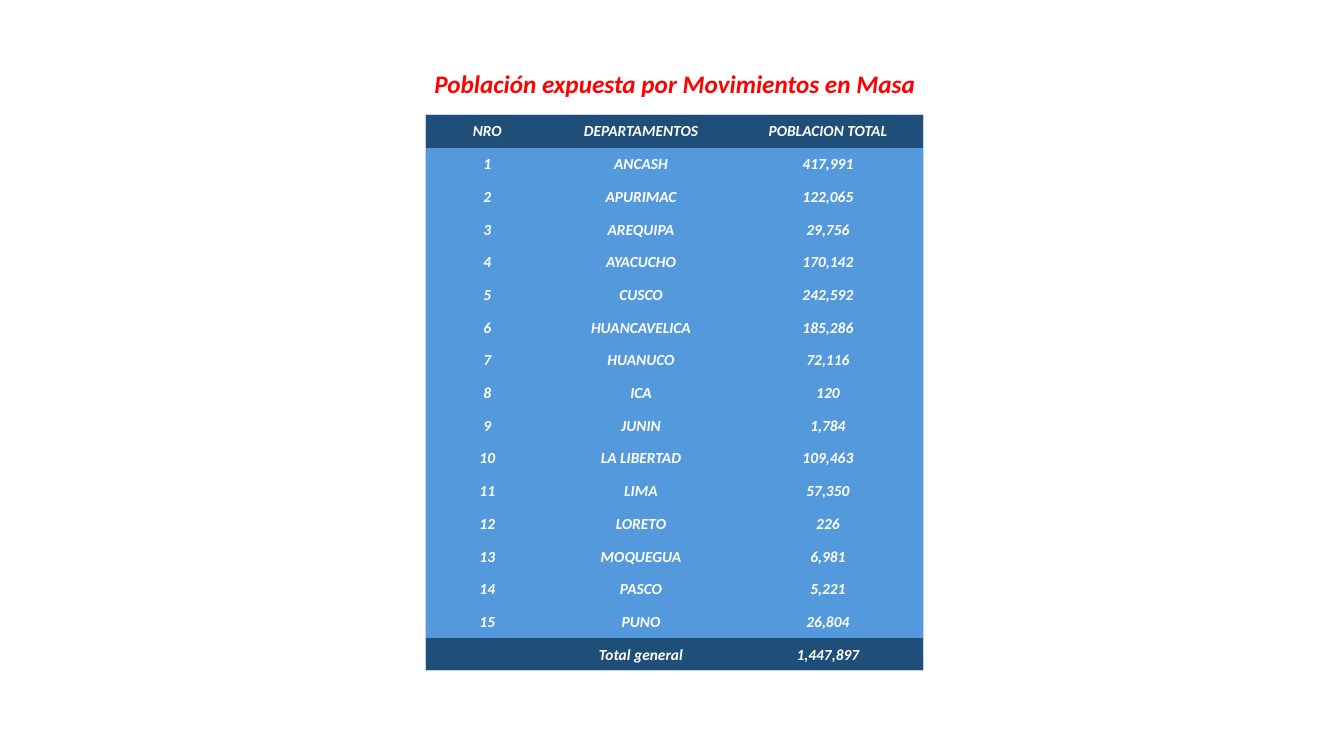
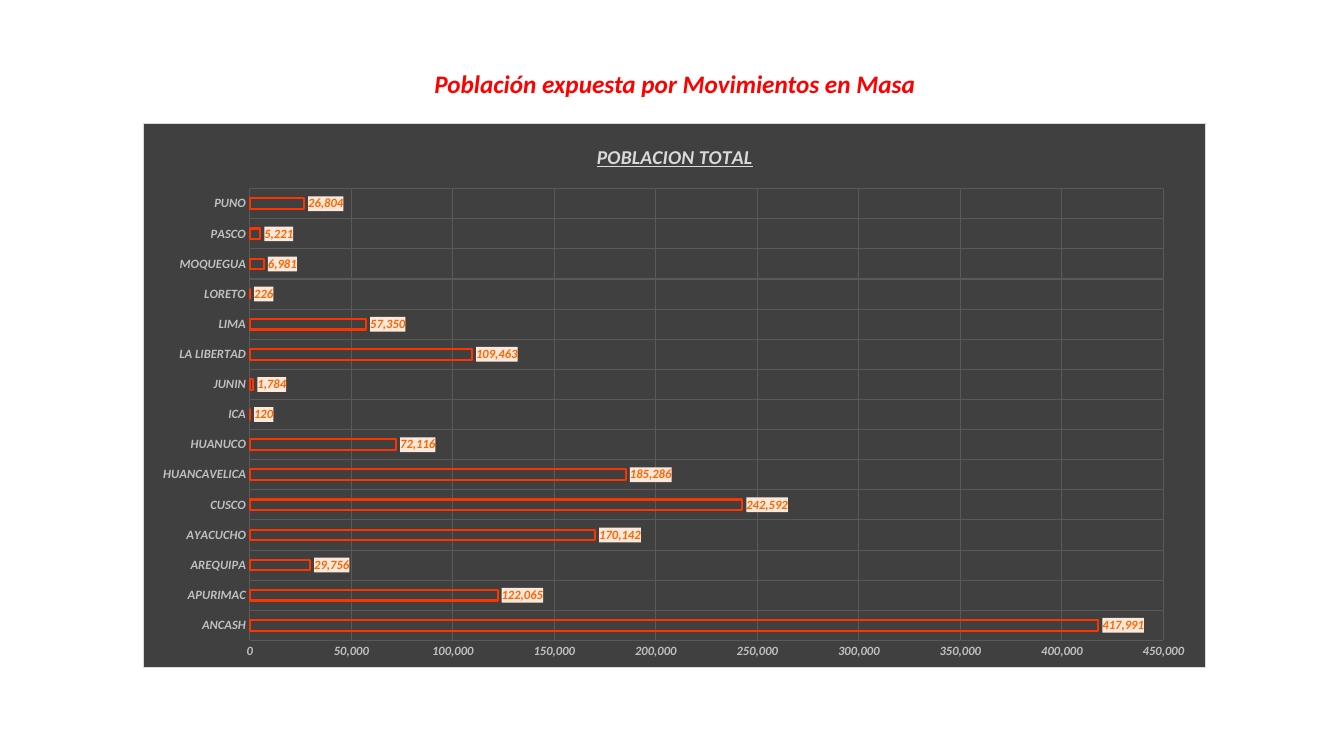
from typing import NamedTuple

from lxml.etree import SubElement
from pptx import Presentation
from pptx.chart.data import CategoryChartData
from pptx.dml.color import RGBColor
from pptx.enum.chart import XL_CHART_TYPE, XL_LABEL_POSITION, XL_TICK_MARK
from pptx.enum.text import MSO_ANCHOR, MSO_AUTO_SIZE, PP_ALIGN
from pptx.oxml import parse_xml
from pptx.oxml.ns import nsdecls, qn
from pptx.util import Pt

# Shared style
FONT = "Calibri"
RED = RGBColor(0xFF, 0x00, 0x00)
WHITE = RGBColor(0xFF, 0xFF, 0xFF)
NAVY = RGBColor(0x1F, 0x4E, 0x79)
BLUE = RGBColor(0x54, 0x99, 0xDB)
EDGE = RGBColor(0xC4, 0xD5, 0xEB)
DARK = RGBColor(0x40, 0x40, 0x40)
GRID = RGBColor(0x59, 0x59, 0x59)
SILVER = RGBColor(0xBF, 0xBF, 0xBF)
PALE = RGBColor(0xD9, 0xD9, 0xD9)
FLAME = RGBColor(0xFF, 0x33, 0x00)
ORANGE = RGBColor(0xFF, 0x66, 0x00)
CREAM = RGBColor(0xFC, 0xE9, 0xDC)

TITLE = "Población expuesta por Movimientos en Masa"
HEADS = ("NRO", "DEPARTAMENTOS", "POBLACION TOTAL")
NO_STYLE = "{2D5ABB26-0587-4C30-8999-92F81FD0307C}"
NUMBER = "#,##0"


class Box(NamedTuple):
    left: float
    top: float
    width: float
    height: float

    def points(self) -> tuple:
        return tuple(Pt(side) for side in self)


class Region(NamedTuple):
    name: str
    people: int


TITLE_BOX = Box(301, 45.4, 362, 29)
TABLE_BOX = Box(303.8, 82, 355.7, 397.4)
CHART_BOX = Box(102.2, 87.8, 759.6, 389.5)
PLOT = {"x": 0.1, "y": 0.12, "w": 0.86, "h": 0.83}
WIDTHS = (88.6, 131, 136.1)

REGIONS = (
    Region("ANCASH", 417991),
    Region("APURIMAC", 122065),
    Region("AREQUIPA", 29756),
    Region("AYACUCHO", 170142),
    Region("CUSCO", 242592),
    Region("HUANCAVELICA", 185286),
    Region("HUANUCO", 72116),
    Region("ICA", 120),
    Region("JUNIN", 1784),
    Region("LA LIBERTAD", 109463),
    Region("LIMA", 57350),
    Region("LORETO", 226),
    Region("MOQUEGUA", 6981),
    Region("PASCO", 5221),
    Region("PUNO", 26804),
)


def set_font(font, size: float, color: RGBColor) -> None:
    font.name = FONT
    font.size = Pt(size)
    font.bold = font.italic = True
    font.color.rgb = color


def write(frame, text: str, size: float, color: RGBColor):
    line = frame.paragraphs[0]
    line.alignment = PP_ALIGN.CENTER
    run = line.add_run()
    run.text = text
    set_font(run.font, size, color)
    return run


def add_slide(deck):
    slide = deck.slides.add_slide(deck.slide_layouts[5])
    title = slide.shapes.title
    title.left, title.top, title.width, title.height = TITLE_BOX.points()
    frame = title.text_frame
    frame.word_wrap = False
    frame.auto_size = MSO_AUTO_SIZE.SHAPE_TO_FIT_TEXT
    frame.vertical_anchor = MSO_ANCHOR.MIDDLE
    write(frame, TITLE, 18, RED)
    return slide


def paint(cell, sides: list, color: RGBColor) -> None:
    # Borders must come before the fill
    props = cell._tc.get_or_add_tcPr()
    for side in sides:
        line = SubElement(props, qn(f"a:ln{side}"), w=str(Pt(0.5)))
        fill = SubElement(line, qn("a:solidFill"))
        SubElement(fill, qn("a:srgbClr"), val=str(EDGE))
    cell.fill.solid()
    cell.fill.fore_color.rgb = color


def add_grid(slide) -> None:
    total = sum(region.people for region in REGIONS)
    rows = [HEADS]
    rows += [(str(n), region.name, f"{region.people:,}")
             for n, region in enumerate(REGIONS, 1)]
    rows.append(("", "Total general", f"{total:,}"))
    last, end = len(rows) - 1, len(HEADS) - 1

    table = slide.shapes.add_table(
        len(rows), len(HEADS), *TABLE_BOX.points()).table
    table.first_row = table.horz_banding = False
    table._tbl.tblPr.find(qn("a:tableStyleId")).text = NO_STYLE
    for column, width in zip(table.columns, WIDTHS):
        column.width = Pt(width)
    for r, row in enumerate(rows):
        table.rows[r].height = Pt(TABLE_BOX.height / len(rows))
        for c, text in enumerate(row):
            cell = table.cell(r, c)
            cell.margin_left = cell.margin_right = cell.margin_top = Pt(0.7)
            cell.margin_bottom = 0
            cell.vertical_anchor = MSO_ANCHOR.MIDDLE
            edges = {"L": c == 0, "R": c == end, "T": r == 0, "B": r == last}
            sides = [side for side, outer in edges.items() if outer]
            paint(cell, sides, NAVY if r in (0, last) else BLUE)
            if text:
                write(cell.text_frame, text, 11, WHITE)


def make_fill(color: RGBColor, line: str = ""):
    return parse_xml(
        f'<c:spPr {nsdecls("c", "a")}><a:solidFill><a:srgbClr val="{color}"/>'
        f'</a:solidFill>{line}</c:spPr>')


def style_axis(axis) -> None:
    axis.major_tick_mark = axis.minor_tick_mark = XL_TICK_MARK.NONE
    axis.format.line.fill.background()
    axis.has_major_gridlines = True
    grid = axis.major_gridlines.format.line
    grid.color.rgb = GRID
    grid.width = Pt(0.75)
    set_font(axis.tick_labels.font, 9, SILVER)


def place_plot(chart) -> None:
    area = chart._chartSpace.chart.plotArea
    for old in area.findall(qn("c:layout")):
        area.remove(old)
    sizes = "".join(f'<c:{key} val="{val}"/>' for key, val in PLOT.items())
    area.insert(0, parse_xml(
        f'<c:layout {nsdecls("c")}><c:manualLayout>'
        '<c:layoutTarget val="inner"/><c:xMode val="edge"/>'
        f'<c:yMode val="edge"/>{sizes}</c:manualLayout></c:layout>'))


def add_bars(slide) -> None:
    data = CategoryChartData(number_format=NUMBER)
    data.categories = [region.name for region in REGIONS]
    data.add_series("Series 1", [region.people for region in REGIONS])
    chart = slide.shapes.add_chart(
        XL_CHART_TYPE.BAR_CLUSTERED, *CHART_BOX.points(), data).chart
    chart.has_legend = False
    chart.font.name = FONT
    chart.font.size = Pt(10)

    # Dark panel and heading
    border = (f'<a:ln w="{Pt(0.75)}"><a:solidFill><a:srgbClr val="{PALE}"/>'
              '</a:solidFill></a:ln>')
    chart._chartSpace.chart.addnext(make_fill(DARK, border))
    chart.has_title = True
    chart.chart_title.include_in_layout = False
    run = write(chart.chart_title.text_frame, HEADS[2], 14, PALE)
    run.font.underline = True
    place_plot(chart)

    # Axes
    style_axis(chart.category_axis)
    scale = chart.value_axis
    style_axis(scale)
    scale.minimum_scale, scale.maximum_scale = 0, 450000
    scale.major_unit = 50000
    scale.tick_labels.number_format = NUMBER
    scale.tick_labels.number_format_is_linked = False

    # Hollow bars
    plot = chart.plots[0]
    plot.vary_by_categories = False
    plot.gap_width, plot.overlap = 182, -50
    bars = plot.series[0]
    bars.format.fill.background()
    bars.format.line.color.rgb = FLAME
    bars.format.line.width = Pt(1.5)

    # Value labels
    labels = bars.data_labels
    labels.show_value = True
    labels.position = XL_LABEL_POSITION.OUTSIDE_END
    labels.number_format = NUMBER
    labels.number_format_is_linked = False
    set_font(labels.font, 9, ORANGE)
    labels._element.find(qn("c:txPr")).addprevious(make_fill(CREAM))


def main() -> None:
    deck = Presentation()
    deck.slide_width, deck.slide_height = Pt(960), Pt(540)
    add_grid(add_slide(deck))
    add_bars(add_slide(deck))
    deck.save("out.pptx")


if __name__ == "__main__":
    main()
